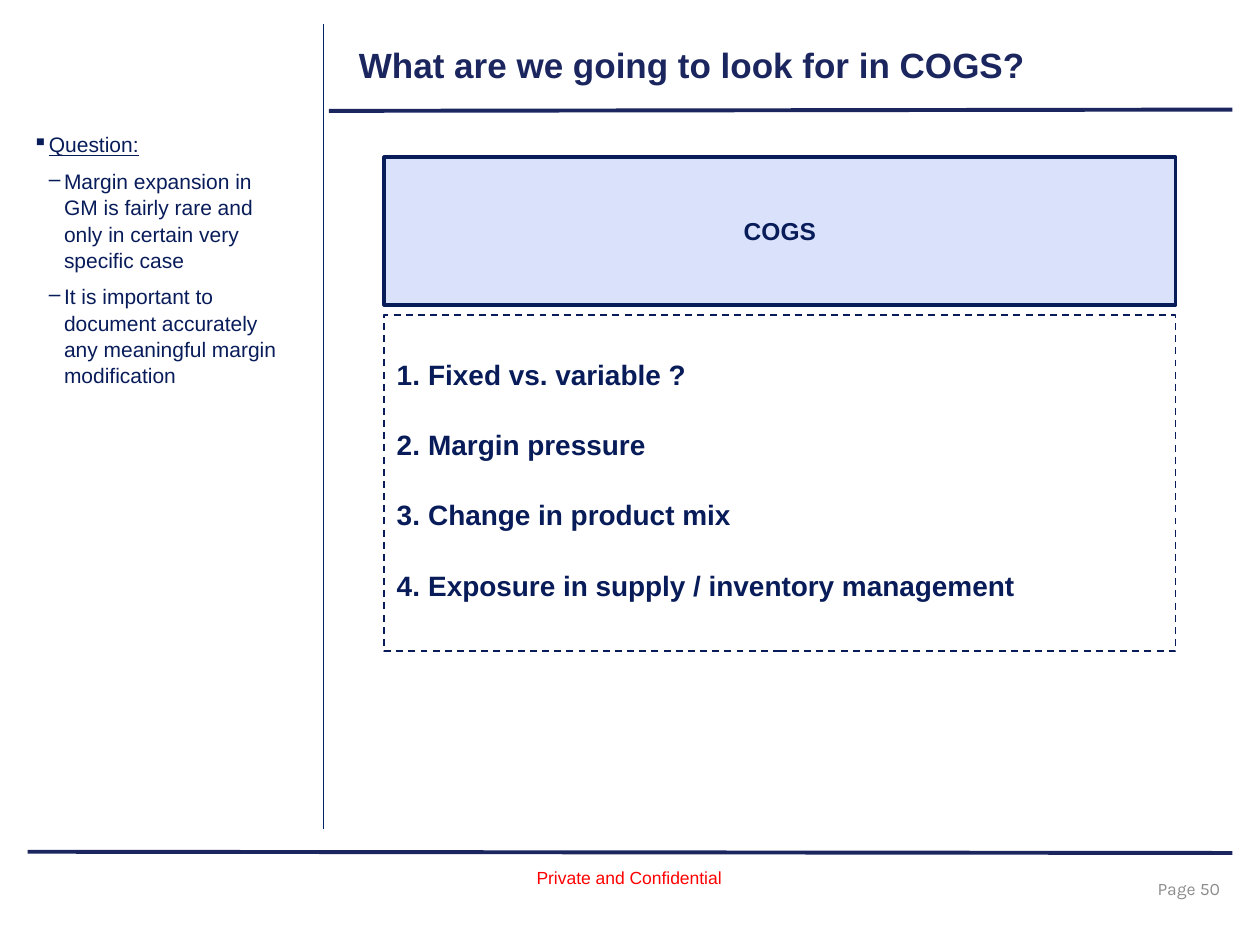
import pptx
import pptx.util
import pptx.dml.color
import pptx.enum.dml
import pptx.enum.shapes
import pptx.enum.text
from lxml import etree
from pptx.oxml.ns import qn

Inches = pptx.util.Inches
Pt = pptx.util.Pt
ALIGN = pptx.enum.text.PP_ALIGN
ANCHOR = pptx.enum.text.MSO_ANCHOR

COLORS = {
    "background": "FFFFFF",
    "rule": "1B265F",
    "divider": "002368",
    "navy": "091C5A",
    "header": "DAE2FB",
    "confidential": "FF0000",
    "page": "8C8C8C",
}
QUESTIONS = [
    "Margin expansion in GM is fairly rare and only in certain very specific case",
    "It is important to document accurately any meaningful margin modification",
]
COGS_TOPICS = [
    "Fixed vs. variable ?",
    "Margin pressure",
    "Change in product mix",
    "Exposure in supply / inventory management",
]


def rgb(name):
    return pptx.dml.color.RGBColor.from_string(COLORS[name])


def style(paragraph, size, color, bold=False, font="Arial"):
    paragraph.font.name = font
    paragraph.font.size = Pt(size)
    paragraph.font.bold = bold
    paragraph.font.color.rgb = rgb(color)


def add_bullet(paragraph, tag, margin, hanging, **attributes):
    properties = paragraph._p.get_or_add_pPr()
    properties.set("marL", str(Inches(margin)))
    properties.set("indent", str(-Inches(hanging)))
    etree.SubElement(properties, qn(tag), attributes)


def add_line(slide, x1, y1, x2, y2, color, width):
    line = slide.shapes.add_connector(
        pptx.enum.shapes.MSO_CONNECTOR.STRAIGHT,
        Inches(x1), Inches(y1), Inches(x2), Inches(y2))
    line.line.color.rgb = rgb(color)
    line.line.width = Pt(width)
    etree.SubElement(line._element.spPr, qn("a:effectLst"))


def add_text_box(slide, left, top, width, height, anchor=ANCHOR.TOP, wrap=True):
    box = slide.shapes.add_textbox(
        Inches(left), Inches(top), Inches(width), Inches(height))
    frame = box.text_frame
    frame.word_wrap = wrap
    frame.vertical_anchor = anchor
    return frame


def add_panel(slide, left, top, width, height, line_width, anchor):
    panel = slide.shapes.add_shape(
        pptx.enum.shapes.MSO_SHAPE.RECTANGLE,
        Inches(left), Inches(top), Inches(width), Inches(height))
    panel.shadow.inherit = False
    panel.line.color.rgb = rgb("navy")
    panel.line.width = Pt(line_width)
    panel.text_frame.word_wrap = True
    panel.text_frame.vertical_anchor = anchor
    return panel


def next_paragraph(frame, index):
    return frame.add_paragraph() if index else frame.paragraphs[0]


def add_frame(slide, left, top, width, height):
    right = left + width
    divider = left + 2.35
    footer = top + height
    add_line(slide, left, footer, right, footer + 0.01, "rule", 2.25)
    add_line(slide, divider + 0.04, top + 0.69, right, top + 0.68, "rule", 2.25)
    add_line(slide, divider, top, divider, top + 0.67, "divider", 0.75)
    add_line(slide, divider, top + 0.06, divider, footer - 0.18, "divider", 0.75)

    page = add_text_box(
        slide, right - 2.29, footer + 0.09, 2.29, 0.4, ANCHOR.MIDDLE).paragraphs[0]
    page.text = "Page 50"
    page.alignment = ALIGN.RIGHT
    style(page, 10, "page", font="Karla")

    notice = add_text_box(
        slide, left + 3.94, footer + 0.07, 1.68, 0.27, wrap=False).paragraphs[0]
    notice.text = "Private and Confidential"
    style(notice, 10, "confidential")


def add_title(slide, left, top, width, height):
    title = add_text_box(slide, left, top, width, height).paragraphs[0]
    title.text = "What are we going to look for in COGS?"
    style(title, 20, "rule", bold=True)


def add_sidebar(slide, left, top, width, height):
    frame = add_text_box(slide, left, top, width, height)
    for index, text in enumerate(["Question:"] + QUESTIONS):
        paragraph = next_paragraph(frame, index)
        paragraph.text = text
        paragraph.line_spacing = 1.04
        paragraph.space_after = Pt(6)
        if index:
            paragraph.level = 1
            add_bullet(paragraph, "a:buChar", 0.25, 0.12, char="–")
        else:
            add_bullet(paragraph, "a:buChar", 0.13, 0.13, char="▪")
        style(paragraph, 12, "navy")
        paragraph.font.underline = index == 0


def add_cogs(slide, left, top, width, height):
    header_height = 1.17
    list_top = header_height + 0.08
    header = add_panel(
        slide, left, top, width, header_height, 2.25, ANCHOR.MIDDLE)
    header.fill.solid()
    header.fill.fore_color.rgb = rgb("header")
    heading = header.text_frame.paragraphs[0]
    heading.text = "COGS"
    heading.alignment = ALIGN.CENTER
    style(heading, 14, "navy", bold=True)

    topics = add_panel(
        slide, left, top + list_top, width, height - list_top, 1, ANCHOR.TOP)
    topics.fill.background()
    topics.line.dash_style = pptx.enum.dml.MSO_LINE.DASH
    for index, text in enumerate(COGS_TOPICS):
        paragraph = next_paragraph(topics.text_frame, index)
        paragraph.text = text
        paragraph.alignment = ALIGN.LEFT
        paragraph.line_spacing = 2.09
        add_bullet(paragraph, "a:buAutoNum", 0.25, 0.25, type="arabicPeriod")
        style(paragraph, 16, "navy", bold=True)


def main():
    deck = pptx.Presentation()
    deck.slide_width = Inches(10)
    deck.slide_height = Inches(7.5)
    slide = deck.slides.add_slide(deck.slide_layouts[6])
    slide.background.fill.solid()
    slide.background.fill.fore_color.rgb = rgb("background")
    add_frame(slide, 0.22, 0.19, 9.56, 6.57)
    add_title(slide, 2.75, 0.3, 6.75, 0.53)
    add_cogs(slide, 3.05, 1.25, 6.28, 3.92)
    add_sidebar(slide, 0.16, 0.99, 2.25, 5.38)
    deck.save("out.pptx")


if __name__ == "__main__":
    main()
